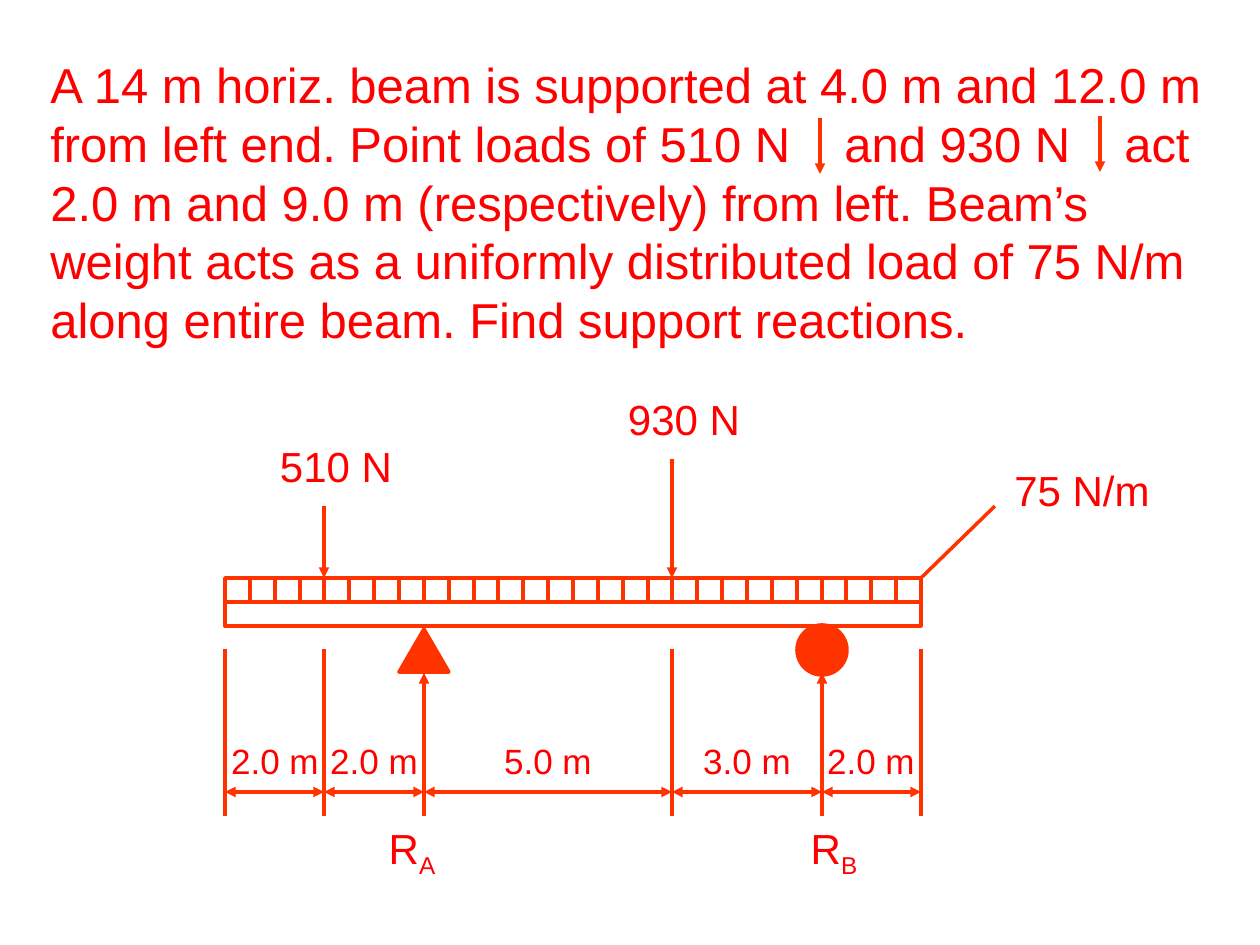
from itertools import pairwise

from lxml import etree
from pptx import Presentation
from pptx import util as u
from pptx.dml.color import RGBColor
from pptx.enum import shapes, text
from pptx.oxml.ns import qn

PX = 914400 / 126
RED, ORANGE = "FF0000", "FF3300"
BEAM_LEFT, BEAM_WIDTH, BEAM_METRES = 225, 696, 14
LOAD_TOP, BEAM_TOP, LAYER = 578, 602, 24
SUPPORT_TOP, REACTION_TOP, GUIDE_TOP, GUIDE_BOTTOM = 626, 673, 649, 816
DIMENSION_Y = 792
STATEMENT = (
    "A 14 m horiz. beam is supported at 4.0 m and 12.0 m",
    "from left end. Point loads of 510 N\tand 930 N\tact",
    "2.0 m and 9.0 m (respectively) from left. Beam’s",
    "weight acts as a uniformly distributed load of 75 N/m",
    "along entire beam. Find support reactions.",
)


def px(length):
    return u.Emu(round(length * PX))


def colour(value):
    return RGBColor.from_string(value)


def beam_x(metres):
    return round(BEAM_LEFT + metres * BEAM_WIDTH / BEAM_METRES)


def add_span(para, content, size, subscript=False):
    span = para.add_run()
    span.text = content
    span.font.name = "Arial"
    span.font.size = u.Pt(size)
    span.font.color.rgb = colour(RED)
    if subscript:
        span.font._element.set("baseline", "-25000")


def add_box(page, left, top, width, height):
    box = page.shapes.add_textbox(px(left), px(top), px(width), px(height))
    box.text_frame.word_wrap = True
    return box.text_frame


def add_label(page, centre, top, width, content, size=24, subscript=""):
    para = add_box(page, centre - width / 2, top, width, 96).paragraphs[0]
    para.alignment = text.PP_ALIGN.CENTER
    add_span(para, content, size)
    if subscript:
        add_span(para, subscript, size, True)


def add_tab_stops(para, positions):
    stops = etree.SubElement(para._p.get_or_add_pPr(), qn("a:tabLst"))
    for position in positions:
        etree.SubElement(stops, qn("a:tab"), pos=str(px(position)), algn="l")


def add_statement(page):
    frame = add_box(page, 38, 48, 1182, 307)
    frame.vertical_anchor = text.MSO_ANCHOR.MIDDLE
    for index, content in enumerate(STATEMENT):
        para = frame.paragraphs[0] if index == 0 else frame.add_paragraph()
        if "\t" in content:
            add_tab_stops(para, (794, 1074))
        add_span(para, content, 28)


def add_line(page, start, end, arrows=()):
    line = page.shapes.add_connector(
        shapes.MSO_CONNECTOR.STRAIGHT, *map(px, start + end))
    line.line.color.rgb = colour(ORANGE)
    line.line.width = u.Pt(2)
    outline = line.line._get_or_add_ln()
    for arrow in arrows:
        etree.SubElement(outline, qn(f"a:{arrow}"), type="triangle")
    etree.SubElement(line._element.spPr, qn("a:effectLst"))


def add_figure(page, kind, left, top, width, height, filled):
    shape = page.shapes.add_shape(kind, px(left), px(top), px(width), px(height))
    shape.shadow.inherit = False
    shape.line.color.rgb = colour(ORANGE)
    shape.line.width = u.Pt(2)
    if filled:
        shape.fill.solid()
        shape.fill.fore_color.rgb = colour(ORANGE)
    else:
        shape.fill.background()


def add_beam(page):
    for top in (BEAM_TOP, LOAD_TOP):
        add_figure(page, shapes.MSO_SHAPE.RECTANGLE, BEAM_LEFT, top,
                   BEAM_WIDTH, LAYER, False)
    for half_metre in range(1, 2 * BEAM_METRES):
        x = beam_x(half_metre / 2)
        add_line(page, (x, BEAM_TOP), (x, LOAD_TOP))
    add_line(page, (995, 506), (beam_x(BEAM_METRES), LOAD_TOP))
    add_label(page, 1082, 458, 223, "75 N/m")


def add_load(page, metres, top, content):
    x = beam_x(metres)
    add_line(page, (x, top), (x, LOAD_TOP), ["tailEnd"])
    add_label(page, x + 12, top - 72, 174, content)


def add_support(page, metres, kind, top, height, name, shift):
    x = beam_x(metres)
    add_figure(page, kind, x - 25, top, 50, height, True)
    add_line(page, (x, GUIDE_BOTTOM), (x, REACTION_TOP), ["tailEnd"])
    add_label(page, x + shift, GUIDE_BOTTOM, 124, "R", subscript=name)


def add_dimensions(page):
    for metres in (0, 2, 9, BEAM_METRES):
        x = beam_x(metres)
        add_line(page, (x, GUIDE_TOP), (x, GUIDE_BOTTOM))
    for start, end in pairwise((0, 2, 4, 9, 12, BEAM_METRES)):
        add_line(page, (beam_x(start), DIMENSION_Y), (beam_x(end), DIMENSION_Y),
                 ["headEnd", "tailEnd"])
        add_label(page, beam_x((start + end) / 2), 733, 149,
                  f"{end - start:.1f} m", 20)


def main():
    deck = Presentation()
    deck.slide_width, deck.slide_height = u.Inches(10), u.Inches(7.5)
    page = deck.slides.add_slide(deck.slide_layouts[6])
    add_statement(page)
    add_line(page, (1100, 116), (1100, 172), ["tailEnd"])
    add_line(page, (820, 118), (820, 174), ["tailEnd"])
    add_support(page, 4, shapes.MSO_SHAPE.ISOSCELES_TRIANGLE,
                SUPPORT_TOP + 3, 43, "A", -12)
    add_support(page, 12, shapes.MSO_SHAPE.OVAL, SUPPORT_TOP - 1, 50, "B", 12)
    add_beam(page)
    add_load(page, 2, 506, "510 N")
    add_load(page, 9, 459, "930 N")
    add_dimensions(page)
    deck.save("out.pptx")


if __name__ == "__main__":
    main()
